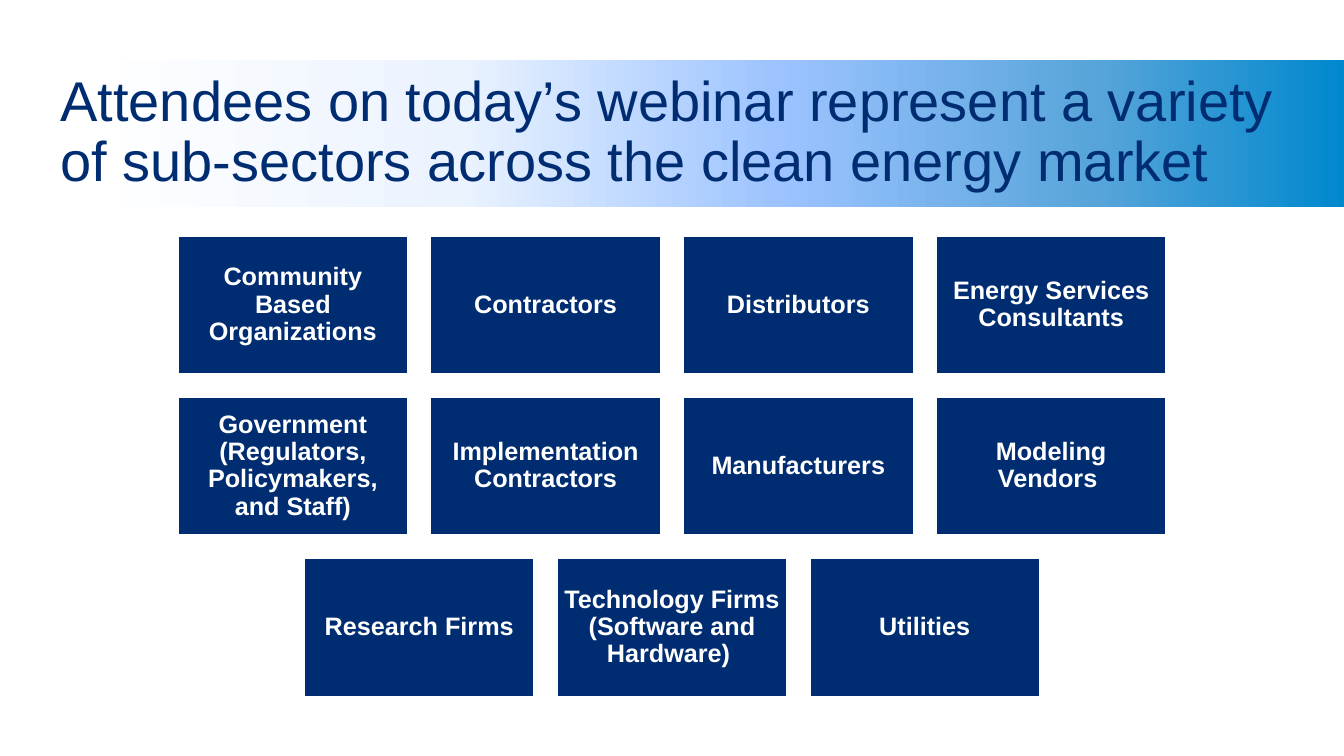
from lxml import etree
from pptx import Presentation
from pptx.dml.color import RGBColor
from pptx.enum.shapes import MSO_SHAPE
from pptx.enum.text import MSO_ANCHOR, MSO_AUTO_SIZE, PP_ALIGN
from pptx.oxml.ns import qn
from pptx.util import Inches, Pt

RECT = MSO_SHAPE.RECTANGLE
MIDDLE = MSO_ANCHOR.MIDDLE
LEFT, CENTER = PP_ALIGN.LEFT, PP_ALIGN.CENTER
NO_FIT = MSO_AUTO_SIZE.NONE

NAVY, WHITE = "002D72", "FFFFFF"
BAND_STOPS = [(2, WHITE), (31, "EBF3FF"), (56, "9CC3FF"), (81, "56A4D9"), (100, "0088CE")]
SECTOR_ROWS = [
    ["Community Based Organizations", "Contractors", "Distributors",
     "Energy Services Consultants"],
    ["Government (Regulators, Policymakers, and Staff)", "Implementation Contractors",
     "Manufacturers", "Modeling Vendors "],
    ["Research Firms", "Technology Firms (Software and Hardware) ", "Utilities"],
]
SLIDE_W = 13.33
BOX_W, BOX_H = 2.28, 1.37
STEP_X, STEP_Y = 2.507, 1.6
TOP = 2.34


def rgb(value):
    return RGBColor.from_string(value)


def write(shape, text, size, color, bold, align, inset):
    """Fill a shape with one vertically centred paragraph."""
    tf = shape.text_frame
    tf.word_wrap = True
    tf.auto_size = NO_FIT
    tf.vertical_anchor = MIDDLE
    tf.margin_left = tf.margin_right = tf.margin_top = tf.margin_bottom = Inches(inset)
    p = tf.paragraphs[0]
    p.alignment = align
    p.line_spacing = 0.9
    r = p.add_run()
    r.text = text
    r.font.name = "Arial"
    r.font.size = Pt(size)
    r.font.bold = bold
    r.font.color.rgb = rgb(color)


prs = Presentation()
prs.slide_width, prs.slide_height = Inches(SLIDE_W), Inches(7.5)
s = prs.slides.add_slide(prs.slide_layouts[5])

# Gradient band behind the title
band = s.shapes.add_shape(RECT, Inches(0.6), Inches(0.6), Inches(12.73), Inches(1.45))
band.shadow.inherit = False
band.line.fill.background()
band.fill.gradient()
band.fill.gradient_angle = 0
stops = band._element.spPr.find(qn("a:gradFill")).find(qn("a:gsLst"))
for stop in list(stops):
    stops.remove(stop)
for percent, color in BAND_STOPS:
    stop = etree.SubElement(stops, qn("a:gs"), pos=str(percent * 1000))
    etree.SubElement(stop, qn("a:srgbClr"), val=color)

title = s.shapes.title
title.left, title.top = Inches(0.6), Inches(0.6)
title.width, title.height = Inches(12.14), Inches(1.45)
write(title, "Attendees on today’s webinar represent a variety of sub-sectors "
      "across the clean energy market", 40, NAVY, False, LEFT, 0)
s.shapes._spTree.append(title._element)

# Sector boxes, each row centred on the slide
for row, sectors in enumerate(SECTOR_ROWS):
    left = (SLIDE_W - BOX_W - (len(sectors) - 1) * STEP_X) / 2
    for col, sector in enumerate(sectors):
        box = s.shapes.add_shape(RECT, Inches(left + col * STEP_X), Inches(TOP + row * STEP_Y),
                                 Inches(BOX_W), Inches(BOX_H))
        box.shadow.inherit = False
        box.fill.solid()
        box.fill.fore_color.rgb = rgb(NAVY)
        box.line.color.rgb = rgb(WHITE)
        box.line.width = Pt(1)
        write(box, sector, 18, WHITE, True, CENTER, 0.07)

prs.save("out.pptx")
